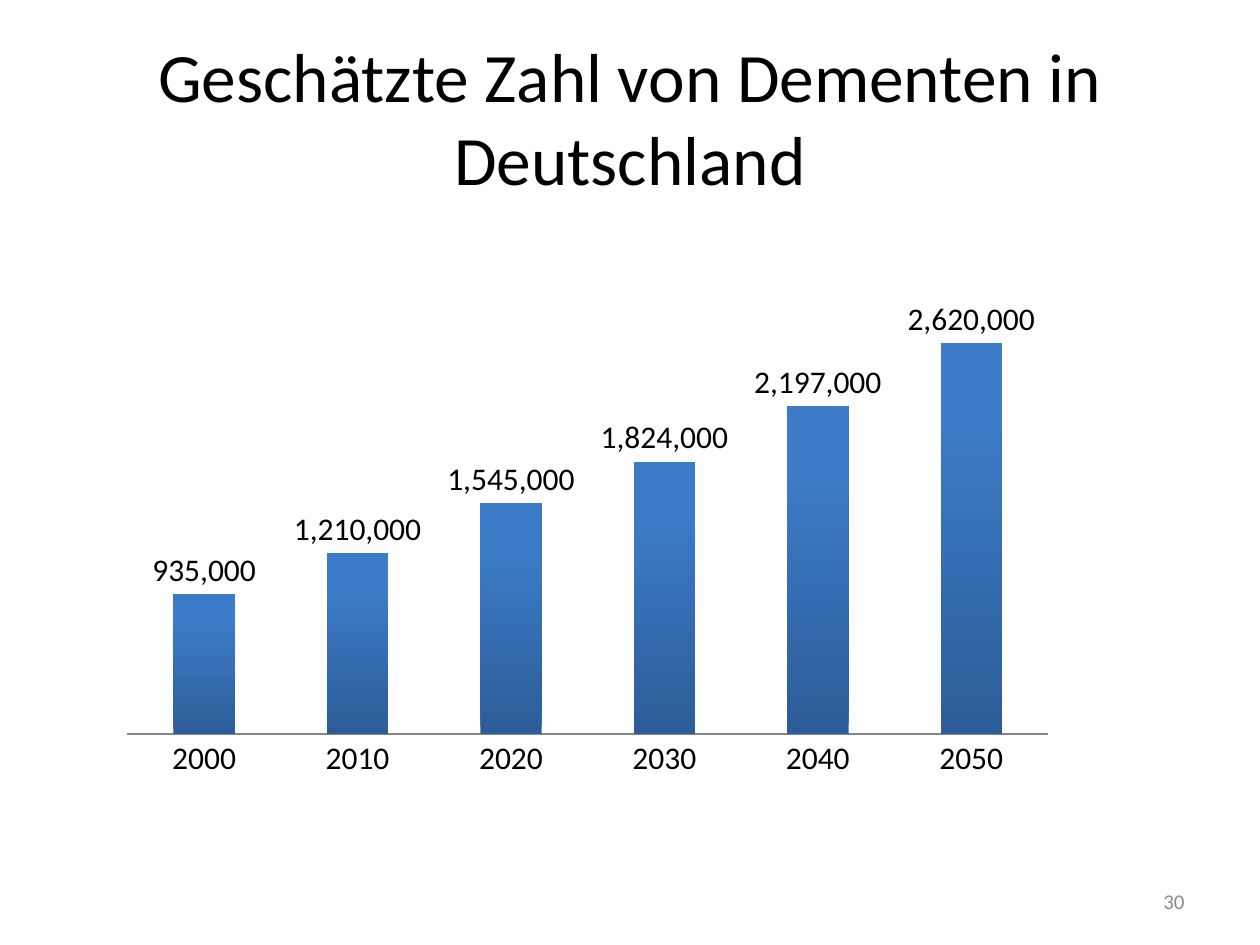
from pptx import Presentation
from pptx.chart.data import CategoryChartData
from pptx.dml.color import RGBColor
from pptx.enum.chart import XL_CHART_TYPE, XL_LABEL_POSITION, XL_TICK_MARK
from pptx.enum.text import MSO_ANCHOR, PP_ALIGN
from pptx.util import Inches, Pt

COLUMNS = XL_CHART_TYPE.COLUMN_CLUSTERED
OUTSIDE_END = XL_LABEL_POSITION.OUTSIDE_END
NO_TICK = XL_TICK_MARK.NONE
MIDDLE = MSO_ANCHOR.MIDDLE
CENTER, RIGHT = PP_ALIGN.CENTER, PP_ALIGN.RIGHT

FONT = "Calibri"
BLACK, GREY = "000000", "8C8C8C"
BAR_BOTTOM, BAR_TOP = "2C5D98", "3C7BC7"
NUMBER_FORMAT = "#,##0"

DEMENTIA_CASES = {
    "2000": 935000,
    "2010": 1210000,
    "2020": 1545000,
    "2030": 1824000,
    "2040": 2197000,
    "2050": 2620000,
}


def rgb(hex_color):
    return RGBColor.from_string(hex_color)


def style_font(font, size, color):
    font.name = FONT
    font.size = Pt(size)
    font.color.rgb = rgb(color)


def add_text(slide, text, left, top, width, height, size, color, align):
    box = slide.shapes.add_textbox(
        Inches(left), Inches(top), Inches(width), Inches(height))
    frame = box.text_frame
    frame.word_wrap = True
    frame.vertical_anchor = MIDDLE
    frame.text = text
    paragraph = frame.paragraphs[0]
    paragraph.alignment = align
    style_font(paragraph.runs[0].font, size, color)


def fill_bars(series):
    """Shade the bars from dark at the foot to lighter at the top."""
    fill = series.format.fill
    fill.gradient()
    fill.gradient_angle = 90
    foot, top = fill.gradient_stops
    foot.color.rgb, foot.position = rgb(BAR_BOTTOM), 0
    top.color.rgb, top.position = rgb(BAR_TOP), 0.8


def add_cases_chart(slide, left, top, width, height):
    data = CategoryChartData(number_format=NUMBER_FORMAT)
    data.categories = list(DEMENTIA_CASES)
    data.add_series("Series 1", list(DEMENTIA_CASES.values()))
    chart = slide.shapes.add_chart(
        COLUMNS, Inches(left), Inches(top), Inches(width), Inches(height), data).chart
    chart.has_title = False
    chart.has_legend = False
    style_font(chart.font, 18, BLACK)

    years = chart.category_axis
    years.major_tick_mark = NO_TICK
    years.format.line.color.rgb = rgb("868686")
    cases = chart.value_axis
    cases.visible = False
    cases.has_major_gridlines = False
    cases.minimum_scale, cases.maximum_scale = 0, 3000000

    plot = chart.plots[0]
    plot.gap_width = 150
    plot.vary_by_categories = False
    plot.has_data_labels = True
    labels = plot.data_labels
    labels.show_value = True
    labels.number_format = NUMBER_FORMAT
    labels.number_format_is_linked = False
    labels.position = OUTSIDE_END
    style_font(labels.font, 18, BLACK)
    fill_bars(plot.series[0])


def main():
    prs = Presentation()
    prs.slide_width, prs.slide_height = Inches(10), Inches(7.5)
    slide = prs.slides.add_slide(prs.slide_layouts[6])
    add_text(slide, "Geschätzte Zahl von Dementen in Deutschland",
             0.5, 0.3, 9, 1.25, 39.6, BLACK, CENTER)
    add_cases_chart(slide, 0.86, 2.19, 7.61, 4.06)
    add_text(slide, "30", 7.17, 6.95, 2.33, 0.4, 12, GREY, RIGHT)
    prs.save("out.pptx")


if __name__ == "__main__":
    main()
